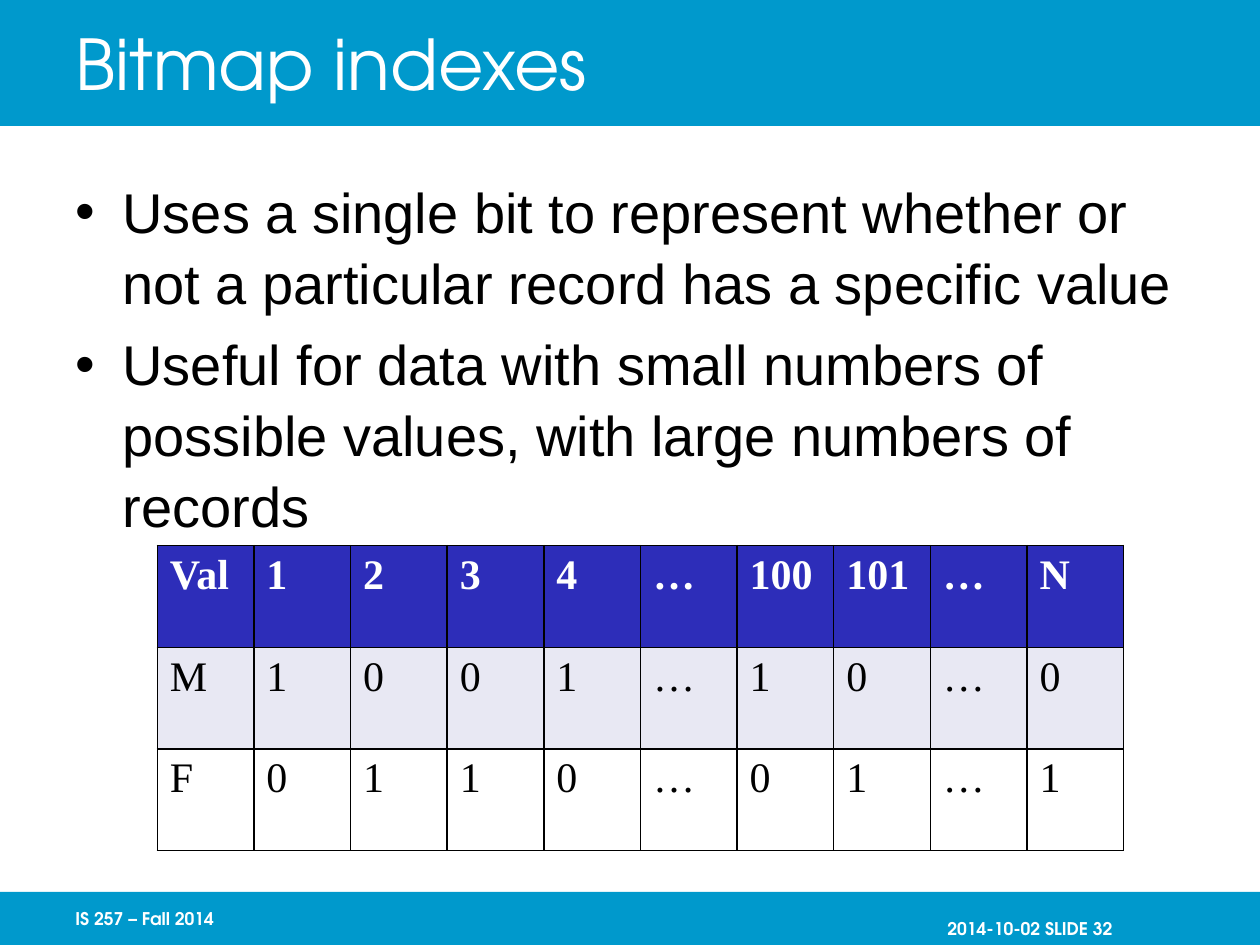
"""Build the slide on bitmap indexes."""
import typing

import lxml.etree
import pptx
import pptx.dml.color
import pptx.enum.shapes
import pptx.enum.text
import pptx.oxml.ns
import pptx.util

Cm = pptx.util.Cm
Pt = pptx.util.Pt
MIDDLE = pptx.enum.text.MSO_ANCHOR.MIDDLE
TOP = pptx.enum.text.MSO_ANCHOR.TOP

DISPLAY_FONT = "TeX Gyre Adventor"
BAND_BLUE, HEADER_BLUE, STRIPE = "0099CC", "2D2DB9", "E8E8F3"
WHITE, BLACK = "FFFFFF", "000000"

POINTS = [
    "Uses a single bit to represent whether or not a particular record has a specific value",
    "Useful for data with small numbers of possible values, with large numbers of records",
]
BITMAP = [
    ["Val", "1", "2", "3", "4", "…", "100", "101", "…", "N"],
    ["M", "1", "0", "0", "1", "…", "1", "0", "…", "0"],
    ["F", "0", "1", "1", "0", "…", "0", "1", "…", "1"],
]


class Box(typing.NamedTuple):
    """A region of the slide in centimetres."""

    left: float
    top: float
    width: float
    height: float

    def inner(self, left, width):
        """Return a full-height part of this box."""
        return Box(self.left + left, self.top, width, self.height)

    def lengths(self):
        """Return the four measures as lengths."""
        return [Cm(measure) for measure in self]


def color(hex_string):
    """Turn a hex string into a colour."""
    return pptx.dml.color.RGBColor.from_string(hex_string)


def paint(target, hex_string):
    """Give a shape or cell a solid fill."""
    target.fill.solid()
    target.fill.fore_color.rgb = color(hex_string)


def add_element(parent, tag, **attributes):
    """Append a drawing element to its parent."""
    return lxml.etree.SubElement(parent, pptx.oxml.ns.qn(tag), attributes)


def style(paragraph, name, size, hex_string, bold=False):
    """Set the font of a whole paragraph."""
    font = paragraph.font
    font.name, font.size, font.bold = name, Pt(size), bold
    font.color.rgb = color(hex_string)


def add_frame(slide, box, anchor):
    """Add a wrapping text box and return its frame."""
    frame = slide.shapes.add_textbox(*box.lengths()).text_frame
    frame.word_wrap = True
    frame.vertical_anchor = anchor
    return frame


def add_band(slide, box):
    """Fill a box with the blue band."""
    band = slide.shapes.add_shape(pptx.enum.shapes.MSO_SHAPE.RECTANGLE, *box.lengths())
    band.shadow.inherit = False
    paint(band, BAND_BLUE)
    band.line.fill.background()


def add_band_text(slide, box, text, size, bold=False):
    """Write one white line on a band and return its frame."""
    frame = add_frame(slide, box, MIDDLE)
    frame.text = text
    style(frame.paragraphs[0], DISPLAY_FONT, size, WHITE, bold)
    return frame


def add_header(slide, box):
    """Add the title band."""
    add_band(slide, box)
    add_band_text(slide, box.inner(1.27, 21.6), "Bitmap indexes", 40)


def add_footer(slide, box):
    """Add the footer band with course and slide number."""
    add_band(slide, box)
    add_band_text(slide, box.inner(1.27, 5.28), "IS 257 – Fall 2014", 10, True)
    number = add_band_text(slide, box.inner(18.85, 5.28), "2014-10-02 SLIDE 32", 10, True)
    number.margin_top = Cm(0.53)


def add_points(slide, box):
    """Add the bulleted points."""
    frame = add_frame(slide, box, TOP)
    for index, point in enumerate(POINTS):
        paragraph = frame.add_paragraph() if index else frame.paragraphs[0]
        paragraph.text = point
        paragraph.line_spacing = 1.05
        if index:
            paragraph.space_before = Pt(6.4)
        properties = paragraph._p.get_or_add_pPr()
        properties.set("marL", str(Cm(0.95)))
        properties.set("indent", str(-Cm(0.95)))
        add_element(properties, "a:buFont", typeface="Arial")
        add_element(properties, "a:buChar", char="•")
        style(paragraph, "Arial", 32, BLACK)


def add_borders(cell):
    """Draw thin black lines around a cell."""
    properties = cell._tc.get_or_add_tcPr()
    for side in ("a:lnL", "a:lnR", "a:lnT", "a:lnB"):
        line = add_element(properties, side, w=str(Pt(1)))
        add_element(add_element(line, "a:solidFill"), "a:srgbClr", val=BLACK)


def add_bitmap(slide, box):
    """Add the bitmap table with equal rows and columns."""
    table = slide.shapes.add_table(len(BITMAP), len(BITMAP[0]), *box.lengths()).table
    for column in table.columns:
        column.width = Cm(box.width / len(BITMAP[0]))
    for row, values, fill in zip(table.rows, BITMAP, (HEADER_BLUE, STRIPE, WHITE)):
        row.height = Cm(box.height / len(BITMAP))
        heading = fill == HEADER_BLUE
        for cell, value in zip(row.cells, values):
            cell.text = value
            style(cell.text_frame.paragraphs[0], "Times New Roman", 24,
                  WHITE if heading else BLACK, heading)
            add_borders(cell)
            paint(cell, fill)


def main():
    """Build and save the slide."""
    deck = pptx.Presentation()
    deck.slide_width, deck.slide_height = Cm(25.4), Cm(19.05)
    slide = deck.slides.add_slide(deck.slide_layouts[6])
    add_header(slide, Box(0, 0, 25.4, 2.54))
    add_footer(slide, Box(0, 17.98, 25.4, 1.07))
    add_points(slide, Box(1.27, 3.39, 22.86, 13.76))
    add_bitmap(slide, Box(3.17, 11, 19.48, 6.15))
    deck.save("out.pptx")


if __name__ == "__main__":
    main()
